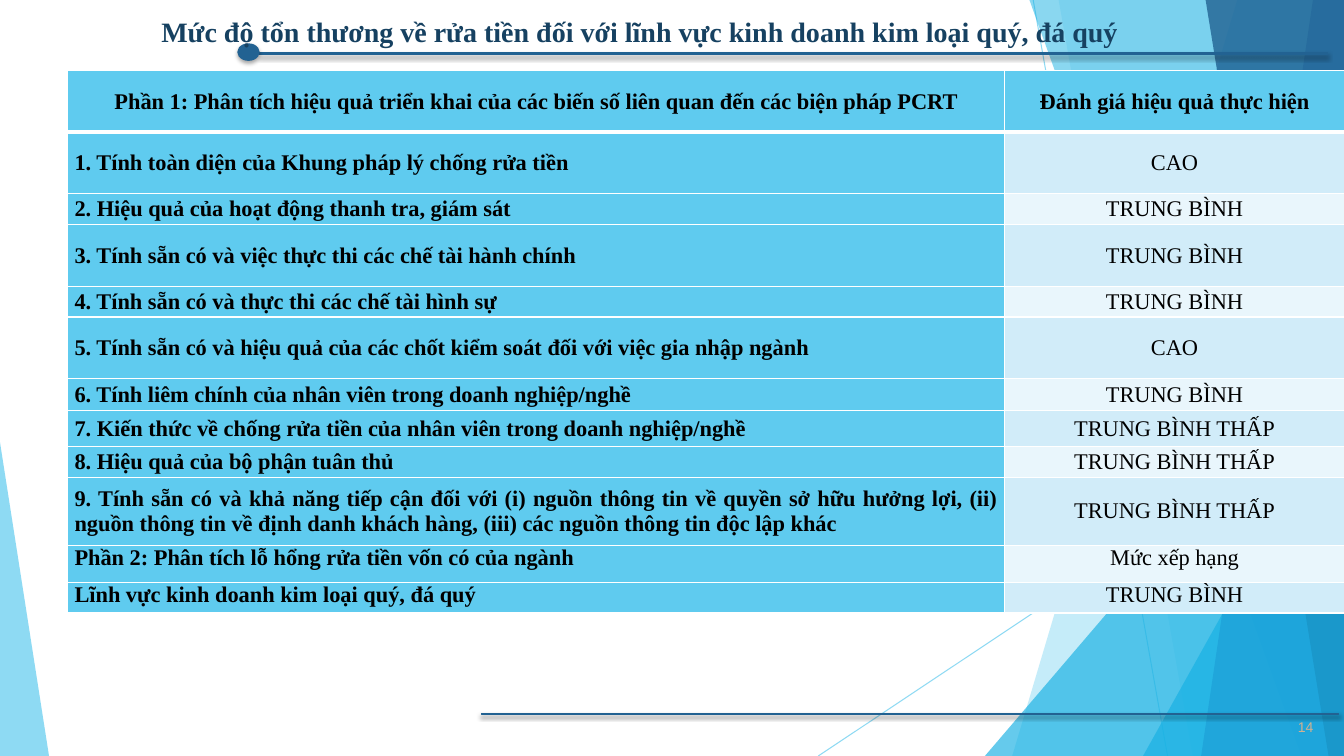
import pptx
import pptx.util
import pptx.dml.color
import pptx.enum.shapes
import pptx.enum.text
import pptx.oxml
import pptx.oxml.ns
from lxml import etree

Pt = pptx.util.Pt
qn = pptx.oxml.ns.qn
Kind = pptx.enum.shapes.MSO_SHAPE
Align = pptx.enum.text.PP_ALIGN
Anchor = pptx.enum.text.MSO_ANCHOR

WIDE, HIGH = 960, 540
SERIF = "Times New Roman"
COLORS = {
    "sky": "5FCBEF", "cyan": "16B0E3", "blue": "2E83C3", "navy": "226292",
    "title": "164161", "page": "D2B191", "ink": "000000", "white": "FFFFFF",
    "odd": "D1ECF9", "even": "E9F6FC",
}
FACETS = [
    (884, 723, "sky", 36),
    (756, 852, "sky", 20),
    (703.5, 240, 256.5, 300, 1, "cyan", 66),
    (735, 929.5, "cyan", 50),
    (938, 858, "blue", 70),
    (861, 949, "navy", 80),
    (816.5, 283, 143.5, 257, 1, "cyan", 66),
    (0, 316, 35, 224, 0, "sky", 70),
]
ROWS = [
    (44, "Phần 1: Phân tích hiệu quả triển khai của các biến số liên quan đến các biện pháp PCRT",
     "Đánh giá hiệu quả thực hiện"),
    (44, "1. Tính toàn diện của Khung pháp lý chống rửa tiền", "CAO"),
    (22, "2. Hiệu quả của hoạt động thanh tra, giám sát", "TRUNG BÌNH"),
    (44, "3. Tính sẵn có và việc thực thi các chế tài hành chính", "TRUNG BÌNH"),
    (22, "4. Tính sẵn có và thực thi các chế tài hình sự", "TRUNG BÌNH"),
    (44, "5. Tính sẵn có và hiệu quả của các chốt kiểm soát đối với việc gia nhập ngành", "CAO"),
    (23, "6. Tính liêm chính của nhân viên trong doanh nghiệp/nghề", "TRUNG BÌNH"),
    (25.5, "7. Kiến thức về chống rửa tiền của nhân viên trong doanh nghiệp/nghề", "TRUNG BÌNH THẤP"),
    (22, "8. Hiệu quả của bộ phận tuân thủ", "TRUNG BÌNH THẤP"),
    (48.5, "9. Tính sẵn có và khả năng tiếp cận đối với (i) nguồn thông tin về quyền sở hữu hưởng lợi, "
     "(ii) nguồn thông tin về định danh khách hàng, (iii) các nguồn thông tin độc lập khác",
     "TRUNG BÌNH THẤP"),
    (26.5, "Phần 2: Phân tích lỗ hổng rửa tiền vốn có của ngành", "Mức xếp hạng"),
    (22, "Lĩnh vực kinh doanh kim loại quý, đá quý", "TRUNG BÌNH"),
]


def tint(name):
    return pptx.dml.color.RGBColor.from_string(COLORS[name])


def paint(fill, name):
    fill.solid()
    fill.fore_color.rgb = tint(name)


def fade(shape, share):
    for color in shape.element.spPr.iter(qn("a:srgbClr")):
        etree.SubElement(color, qn("a:alpha"), val=str(share * 1000))


def write(frame, text, size, face, color, bold, align):
    frame.text = text
    para = frame.paragraphs[0]
    para.alignment = align
    font = para.runs[0].font
    font.size, font.name, font.bold = Pt(size), face, bold
    font.color.rgb = tint(color)


def add_ray(shapes, x1, y1, x2, y2):
    ray = shapes.add_connector(pptx.enum.shapes.MSO_CONNECTOR.STRAIGHT, Pt(x1), Pt(y1), Pt(x2), Pt(y2))
    ray.line.width = Pt(0.75)
    paint(ray.line.fill, "sky")
    fade(ray, 70)
    etree.SubElement(ray.element.spPr, qn("a:effectLst"))


def add_facet(shapes, *spec_row):
    *place, color, share = spec_row
    if len(place) == 2:
        top, base = place
        pen = shapes.build_freeform(Pt(top), Pt(-1))
        pen.add_line_segments([(Pt(WIDE), Pt(-1)), (Pt(WIDE), Pt(HIGH)), (Pt(base), Pt(HIGH))])
        shape = pen.convert_to_shape()
    else:
        *box, tip = place
        shape = shapes.add_shape(Kind.ISOSCELES_TRIANGLE, *map(Pt, box))
        shape.adjustments[0] = tip
    shape.shadow.inherit = False
    shape.line.fill.background()
    paint(shape.fill, color)
    fade(shape, share)


def add_mark(shapes, kind, *box):
    mark = shapes.add_shape(kind, *map(Pt, box))
    paint(mark.fill, "navy")
    paint(mark.line.fill, "navy")
    mark.line.width = Pt(1)
    mark.shadow.inherit = False
    glow = etree.SubElement(
        mark.element.spPr.find(qn("a:effectLst")), qn("a:outerShdw"),
        blurRad=str(Pt(3)), dist=str(Pt(2)), dir="5400000", rotWithShape="0")
    color = etree.SubElement(glow, qn("a:srgbClr"), val=COLORS["ink"])
    etree.SubElement(color, qn("a:alpha"), val="35000")


def edge(cell, side, width):
    line = etree.SubElement(cell._tc.get_or_add_tcPr(), qn("a:ln" + side), w=str(Pt(width)))
    fill = etree.SubElement(line, qn("a:solidFill"))
    etree.SubElement(fill, qn("a:srgbClr"), val=COLORS["white"])


def fill_cell(cell, text, row, col):
    for side in "LRTB":
        thick = (row, side) in ((0, "B"), (1, "T"))
        edge(cell, side, 3 if thick else 1)
    band = "odd" if row % 2 else "even"
    head = row == 0
    paint(cell.fill, "sky" if head or col == 0 else band)
    cell.margin_left = cell.margin_right = Pt(5)
    cell.margin_top = cell.margin_bottom = 0
    cell.vertical_anchor = Anchor.TOP if row >= len(ROWS) - 2 else Anchor.MIDDLE
    align = Align.CENTER if head or col else Align.JUSTIFY
    write(cell.text_frame, text, 16, SERIF, "ink", head or col == 0, align)


def add_grid(shapes, left, top, widths):
    high = sum(row[0] for row in ROWS)
    grid = shapes.add_table(len(ROWS), 2, Pt(left), Pt(top), Pt(sum(widths)), Pt(high)).table
    grid.first_row = grid.horz_banding = False
    for col, width in zip(grid.columns, widths):
        col.width = Pt(width)
    for row, (high, *texts) in enumerate(ROWS):
        grid.rows[row].height = Pt(high)
        for col, text in enumerate(texts):
            fill_cell(grid.cell(row, col), text, row, col)


def set_title(title, text):
    title.left, title.top, title.width, title.height = map(Pt, (108, 4.5, 828, 35))
    frame = title.text_frame
    frame.word_wrap = True
    frame.auto_size = pptx.enum.text.MSO_AUTO_SIZE.NONE
    frame.vertical_anchor = Anchor.MIDDLE
    write(frame, text, 20, SERIF, "title", True, Align.LEFT)
    title.element.getparent().append(title.element)


def add_page(shapes, text):
    box = shapes.add_textbox(Pt(920), Pt(510), Pt(40), Pt(19.5))
    box.text_frame.word_wrap = True
    write(box.text_frame, text, 10, "Arial", "page", False, Align.LEFT)


def main():
    deck = pptx.Presentation()
    deck.slide_width, deck.slide_height = Pt(WIDE), Pt(HIGH)
    slide = deck.slides.add_slide(deck.slide_layouts[5])
    shapes = slide.shapes
    paint(slide.background.fill, "white")
    add_ray(shapes, 738, 0, 834, HIGH)
    add_ray(shapes, WIDE, 290, 584.5, HIGH)
    for facet in FACETS:
        add_facet(shapes, *facet)
    add_mark(shapes, Kind.RECTANGLE, 344, 509.5, 612, 0.75)
    add_mark(shapes, Kind.RECTANGLE, 185, 37.5, 763, 1.5)
    add_mark(shapes, Kind.OVAL, 170, 31.5, 15, 11.5)
    add_page(shapes, "14")
    set_title(shapes.title, "Mức độ tổn thương về rửa tiền đối với lĩnh vực kinh doanh kim loại quý, đá quý")
    add_grid(shapes, 48.25, 50.5, (669.5, 242.5))
    deck.save("out.pptx")


if __name__ == "__main__":
    main()
